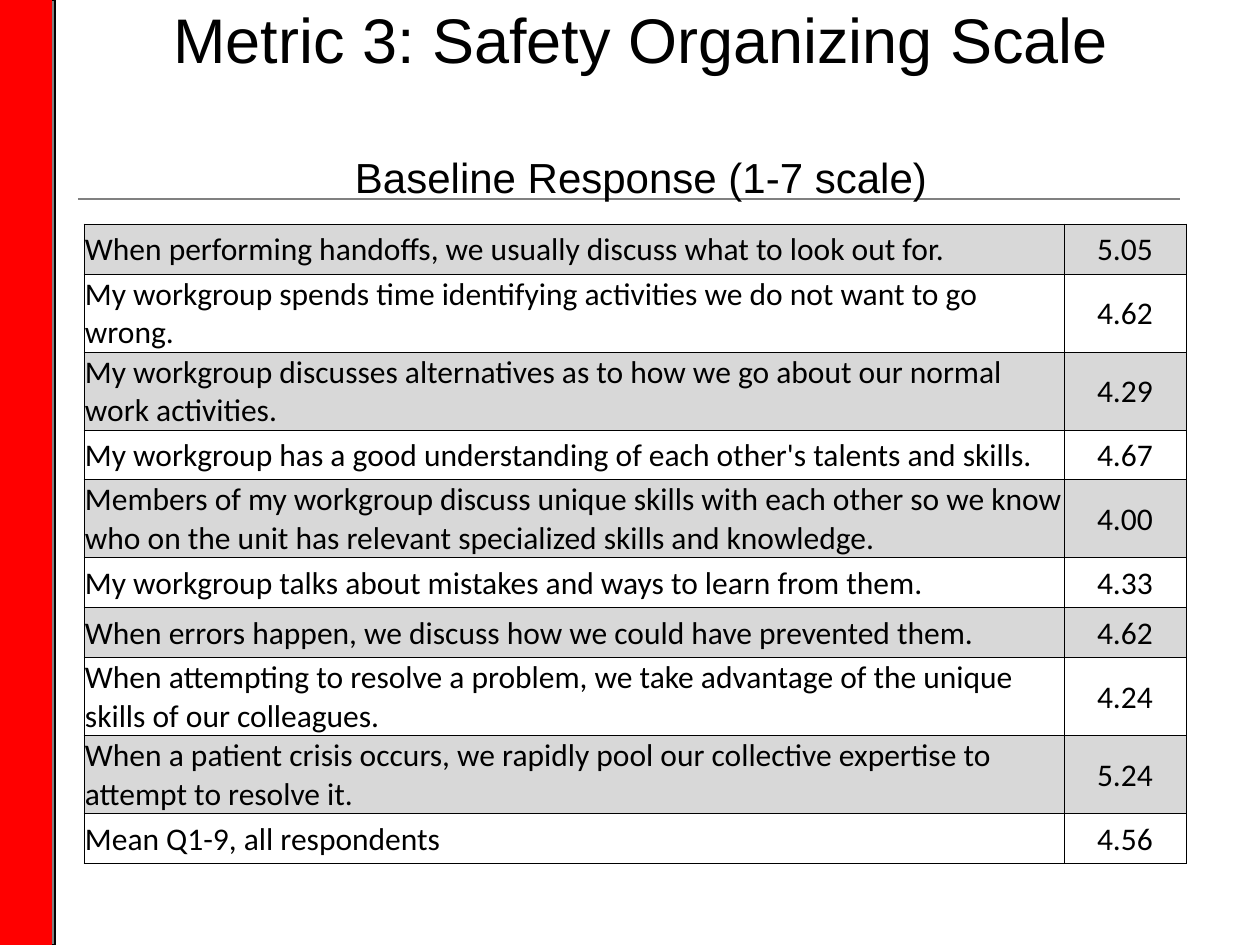
from typing import NamedTuple

from lxml import etree
from pptx import Presentation
from pptx.dml.color import RGBColor
from pptx.enum.shapes import MSO_CONNECTOR, MSO_SHAPE
from pptx.enum.text import MSO_ANCHOR, PP_ALIGN
from pptx.oxml.ns import qn
from pptx.util import Emu, Pt

LINE, RECT = MSO_CONNECTOR.STRAIGHT, MSO_SHAPE.RECTANGLE
MIDDLE, TOP = MSO_ANCHOR.MIDDLE, MSO_ANCHOR.TOP
CENTER, LEFT = PP_ALIGN.CENTER, PP_ALIGN.LEFT

BLACK = RGBColor(0x00, 0x00, 0x00)
GRAY = RGBColor(0x80, 0x80, 0x80)
RED = RGBColor(0xFF, 0x00, 0x00)
BAND = RGBColor(0xD8, 0xD8, 0xD8)

DPI = 126
ROW_ONE, ROW_TWO = 50, 78  # heights of one-line and two-line rows
COLS = (980, 122)


class Bar(NamedTuple):
    left: int
    width: int
    fill: RGBColor
    edge: RGBColor | None


class Head(NamedTuple):
    text: str
    size: int
    gap: int


class Item(NamedTuple):
    text: str
    score: str
    height: int


BARS = [Bar(45, 10, GRAY, BLACK), Bar(0, 52, RED, None)]

HEADS = [
    Head("Metric 3: Safety Organizing Scale", 36, 0),
    Head("Baseline Response (1-7 scale)", 24, 43),
]

ITEMS = [
    Item("When performing handoffs, we usually discuss what to look out for.", "5.05", ROW_ONE),
    Item("My workgroup spends time identifying activities we do not want to go wrong.", "4.62", ROW_TWO),
    Item("My workgroup discusses alternatives as to how we go about our normal work activities.",
         "4.29", ROW_TWO),
    Item("My workgroup has a good understanding of each other's talents and skills.", "4.67", ROW_ONE),
    Item("Members of my workgroup discuss unique skills with each other so we know "
         "who on the unit has relevant specialized skills and knowledge.", "4.00", ROW_TWO),
    Item("My workgroup talks about mistakes and ways to learn from them.", "4.33", ROW_ONE),
    Item("When errors happen, we discuss how we could have prevented them.", "4.62", ROW_ONE),
    Item("When attempting to resolve a problem, we take advantage of the unique "
         "skills of our colleagues.", "4.24", ROW_TWO),
    Item("When a patient crisis occurs, we rapidly pool our collective expertise to "
         "attempt to resolve it.", "5.24", ROW_TWO),
    Item("Mean Q1-9, all respondents", "4.56", ROW_ONE),
]


def px(num: int) -> Emu:
    return Emu(num * 914400 // DPI)


def style(para, text: str, face: str, size: int, align) -> None:
    para.text = text
    para.alignment = align
    para.font.name = face
    para.font.size = Pt(size)
    para.font.color.rgb = BLACK


def draw_bar(slide, bar: Bar) -> None:
    shape = slide.shapes.add_shape(RECT, px(bar.left), 0, px(bar.width), px(945))
    shape.shadow.inherit = False
    shape.fill.solid()
    shape.fill.fore_color.rgb = bar.fill
    if bar.edge is None:
        shape.line.fill.background()
    else:
        shape.line.color.rgb = bar.edge
        shape.line.width = Pt(0.75)


def draw_rule(slide) -> None:
    rule = slide.shapes.add_connector(LINE, px(78), px(199), px(1180), px(199))
    rule.line.color.rgb = GRAY
    rule.line.width = Pt(0.75)
    etree.SubElement(rule._element.spPr, qn("a:effectLst"))


def draw_title(slide) -> None:
    frame = slide.shapes.add_textbox(px(74), px(1), px(1134), px(196)).text_frame
    frame.word_wrap = True
    frame.vertical_anchor = TOP
    frame.margin_left = frame.margin_right = frame.margin_top = frame.margin_bottom = 0
    for num, head in enumerate(HEADS):
        para = frame.add_paragraph() if num else frame.paragraphs[0]
        style(para, head.text, "Arial", head.size, CENTER)
        para.space_before = Pt(head.gap)


def add_edges(cell) -> None:
    props = cell._tc.get_or_add_tcPr()
    for num, side in enumerate(("lnL", "lnR", "lnT", "lnB")):
        edge = etree.Element(qn(f"a:{side}"), w=str(Pt(0.5)))
        fill = etree.SubElement(edge, qn("a:solidFill"))
        etree.SubElement(fill, qn("a:srgbClr"), val=str(BLACK))
        props.insert(num, edge)


def fill_cell(cell, text: str, align, band: bool) -> None:
    style(cell.text_frame.paragraphs[0], text, "Calibri", 18, align)
    cell.vertical_anchor = MIDDLE
    cell.margin_left = cell.margin_right = cell.margin_top = px(1)
    cell.margin_bottom = 0
    if band:
        cell.fill.solid()
        cell.fill.fore_color.rgb = BAND
    else:
        cell.fill.background()
    add_edges(cell)


def draw_table(slide) -> None:
    high = sum(item.height for item in ITEMS)
    table = slide.shapes.add_table(
        len(ITEMS), len(COLS), px(84), px(224), px(sum(COLS)), px(high)).table
    table.first_row = table.horz_banding = False
    for col, width in zip(table.columns, COLS):
        col.width = px(width)
    for num, item in enumerate(ITEMS):
        table.rows[num].height = px(item.height)
        band = num % 2 == 0
        fill_cell(table.cell(num, 0), item.text, LEFT, band)
        fill_cell(table.cell(num, 1), item.score, CENTER, band)


def main() -> None:
    deck = Presentation()
    deck.slide_width, deck.slide_height = px(1260), px(945)
    slide = deck.slides.add_slide(deck.slide_layouts[6])

    # Side stripe and rule under the title
    for bar in BARS:
        draw_bar(slide, bar)
    draw_rule(slide)

    # Title and survey scores
    draw_title(slide)
    draw_table(slide)

    deck.save("out.pptx")


if __name__ == "__main__":
    main()
